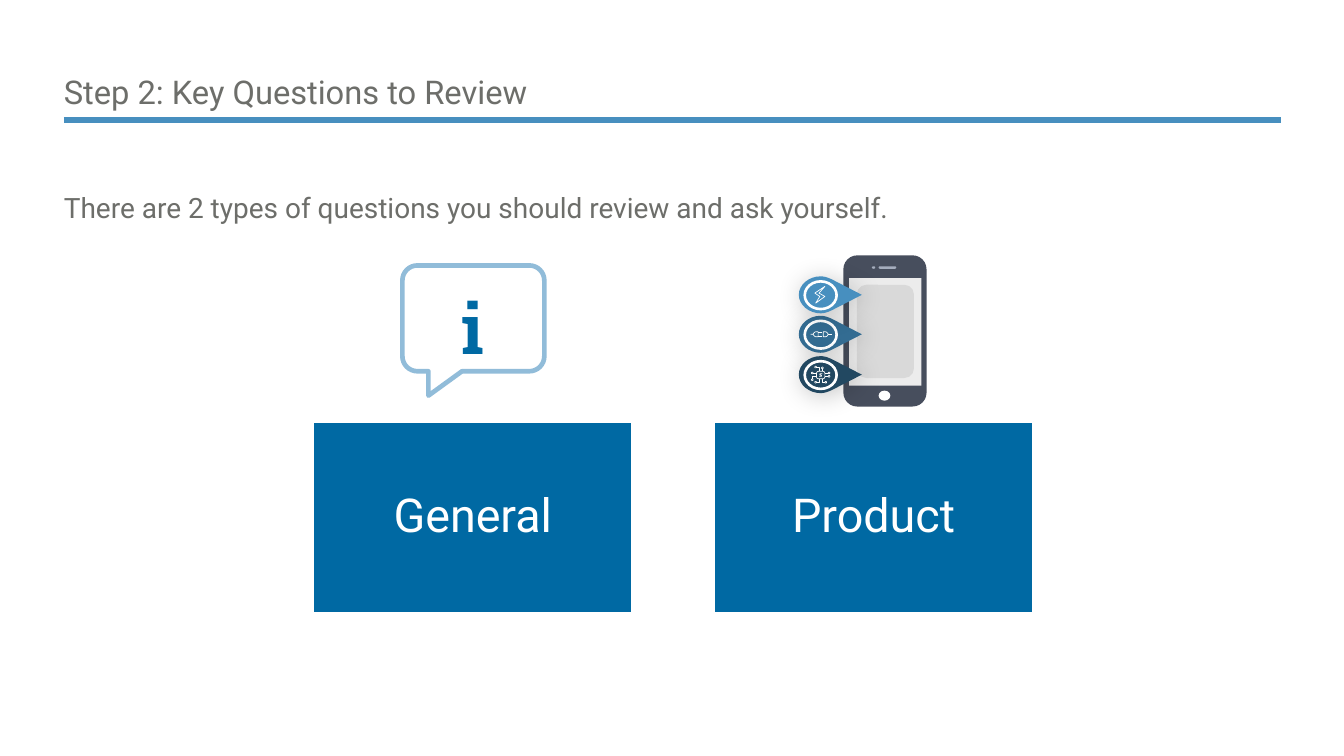
from lxml import etree
from pptx import Presentation
from pptx.dml.color import RGBColor
from pptx.enum.shapes import MSO_CONNECTOR, MSO_SHAPE
from pptx.enum.text import MSO_ANCHOR, PP_ALIGN
from pptx.oxml.ns import qn
from pptx.util import Pt

PX = 9144  # 100 px to the inch
RECT, ROUND, OVAL = MSO_SHAPE.RECTANGLE, MSO_SHAPE.ROUNDED_RECTANGLE, MSO_SHAPE.OVAL
STRAIGHT = MSO_CONNECTOR.STRAIGHT
LEFT, CENTER = PP_ALIGN.LEFT, PP_ALIGN.CENTER
TOP, MIDDLE, BOTTOM = MSO_ANCHOR.TOP, MSO_ANCHOR.MIDDLE, MSO_ANCHOR.BOTTOM

COLORS = {
    "white": "FFFFFF", "gray": "6D6E6A", "blue": "0069A3", "rule": "478FBF",
    "bubble": "91BCD9", "phone": "474E5D", "screen": "ECECEC", "panel": "D9D9D9",
    "speaker": "A5ADBD", "power": "478FBF", "plug": "336C92", "chip": "224861",
    "shadow": "000000",
}

# Outlines: a pair is a line end, six numbers are a curve
BUBBLE = [(497, 316), (630, 316), (640, 316, 648, 324, 648, 334), (648, 424),
          (648, 434, 640, 442, 630, 442), (550, 442), (510, 471), (510, 442),
          (497, 442), (487, 442, 479, 434, 479, 424), (479, 334),
          (479, 324, 487, 316, 497, 316)]
# Pins and their symbols are measured from the centre of the ring
PIN = [(0, -22), (5, -22, 10, -20, 14, -18), (49, 0), (14, 18),
       (10, 20, 5, 22, 0, 22), (-14, 22, -26, 12, -26, 0),
       (-26, -12, -14, -22, 0, -22)]
BOLT = [[(5, -10), (-7, -2), (-1, 2), (-6, 10), (5, 2), (-2, -2), (5, -10)]]
PLUG = [[(-12, 0), (-9, 0), (-8, -2, -7, -3, -5, -3), (-3, -3), (-3, 3), (-5, 3),
         (-7, 3, -8, 2, -9, 0)],
        [(-3, -2), (1, -2)], [(-3, 2), (1, 2)],
        [(3, -3), (5, -3), (7, -3, 8, -2, 9, 0), (8, 2, 7, 3, 5, 3), (3, 3), (3, -3)],
        [(9, 0), (13, 0)]]
CHIP = [[(-2, -4), (2, -4), (4, -4, 5, -3, 5, -1), (5, 2), (5, 4, 4, 5, 2, 5),
         (-2, 5), (-4, 5, -5, 4, -5, 2), (-5, -1), (-5, -3, -4, -4, -2, -4)],
        [(2, -1), (-1, -1), (-1, 0), (1, 1), (1, 2), (-2, 2)],
        [(-9, -2), (-5, -2)], [(-10, 5), (-10, 2), (-5, 2)],
        [(-5, -9), (-1, -9), (-1, -4)], [(2, -7), (2, -4)],
        [(5, -2), (9, -2)], [(5, 2), (9, 2)],
        [(2, 5), (2, 9), (5, 9)], [(-1, 5), (-1, 9), (-5, 9)]]
CHIP_NODES = [(-10, -2), (-10, 6), (-6, -9), (2, -8), (10, -2), (10, 2), (6, 9), (-6, 9)]


def rgb(name):
    return RGBColor.from_string(COLORS[name])


def paint(sp, fill=None, line=None, width=1):
    sp.shadow.inherit = False
    if fill:
        sp.fill.solid()
        sp.fill.fore_color.rgb = rgb(fill)
    else:
        sp.fill.background()
    if line:
        sp.line.color.rgb = rgb(line)
        sp.line.width = Pt(width)
    else:
        sp.line.fill.background()
    return sp


def add_box(s, kind, box, fill=None, line=None, width=1):
    sp = s.shapes.add_shape(kind, *(v * PX for v in box))
    return paint(sp, fill, line, width)


def trace(outline, dx, dy, steps=8):
    """Turn line ends and curves into a list of points."""
    points = []
    for part in outline:
        if len(part) == 2:
            points.append(part)
            continue
        (x0, y0), (x1, y1, x2, y2, x3, y3) = points[-1], part
        for i in range(1, steps + 1):
            t = i / steps
            u = 1 - t
            a, b, c, d = u ** 3, 3 * u * u * t, 3 * u * t * t, t ** 3
            points.append((a * x0 + b * x1 + c * x2 + d * x3,
                           a * y0 + b * y1 + c * y2 + d * y3))
    return [((x + dx) * PX, (y + dy) * PX) for x, y in points]


def add_outline(s, outlines, dx=0, dy=0, fill=None, line=None, width=1):
    builder = None
    for outline in outlines:
        points = trace(outline, dx, dy)
        if builder is None:
            builder = s.shapes.build_freeform(*points[0], scale=1.0)
        else:
            builder.move_to(*points[0])
        builder.add_line_segments(points[1:], close=outline[0] == outline[-1][-2:])
    return paint(builder.convert_to_shape(), fill, line, width)


def add_soft_shadow(sp):
    effects = sp._element.spPr.find(qn("a:effectLst"))
    shadow = etree.SubElement(effects, qn("a:outerShdw"), blurRad=str(Pt(22)),
                              dist=str(Pt(3)), dir="2700000", algn="ctr", rotWithShape="0")
    color = etree.SubElement(shadow, qn("a:srgbClr"), val=COLORS["shadow"])
    etree.SubElement(color, qn("a:alpha"), val="22000")


def write(sp, text, size, color, align=LEFT, anchor=TOP, inset=(0, 0),
          spacing=1.0, font="Roboto", bold=False):
    tf = sp.text_frame
    tf.word_wrap = True
    tf.vertical_anchor = anchor
    tf.margin_left = tf.margin_right = inset[0] * PX
    tf.margin_top = tf.margin_bottom = inset[1] * PX
    tf.text = text
    p = tf.paragraphs[0]
    p.alignment = align
    p.line_spacing = spacing
    p.space_before = Pt(0)
    r = p.runs[0]
    r.font.name, r.font.size, r.font.bold = font, Pt(size), bold
    r.font.color.rgb = rgb(color)


def add_text(s, box, text, size, color, **style):
    sp = s.shapes.add_textbox(*(v * PX for v in box))
    write(sp, text, size, color, **style)


def add_title(s, text):
    sp = s.shapes.title
    sp.left, sp.top, sp.width, sp.height = (v * PX for v in (76, 53, 1449, 79))
    write(sp, text, 28, "gray", anchor=BOTTOM)


def add_rule(s):
    c = s.shapes.add_connector(STRAIGHT, 76 * PX, 143 * PX, 1525 * PX, 143 * PX)
    c.line.color.rgb = rgb("rule")
    c.line.width = Pt(4.5)
    etree.SubElement(c._element.spPr, qn("a:effectLst"))


def add_card(s, x, text):
    sp = add_box(s, RECT, (x, 502, 380, 228), "blue", "white", 2)
    write(sp, text, 40, "white", align=CENTER, anchor=MIDDLE, inset=(17, 17), spacing=0.9)


def add_phone(s):
    add_box(s, ROUND, (1004, 304, 99, 180), "phone")
    add_box(s, RECT, (1011, 331, 86, 128), "screen")
    add_box(s, ROUND, (1020, 339, 68, 111), "panel")
    speaker = add_box(s, ROUND, (1046, 317, 21, 3), "speaker")
    speaker.adjustments[0] = 0.5
    add_box(s, OVAL, (1038, 317, 4, 3), "speaker")
    add_box(s, OVAL, (1046, 465, 14, 12), "white")


def add_pin(s, y, fill, symbol, nodes=()):
    x = 977
    add_soft_shadow(add_outline(s, [PIN], x, y, fill))
    add_box(s, OVAL, (x - 19, y - 16, 38, 33), None, "white", 2.25)
    add_outline(s, symbol, x, y, None, "white", 0.6)
    for dx, dy in nodes:
        add_box(s, OVAL, (x + dx - 1, y + dy - 1, 2, 2), None, "white", 0.6)


def main():
    prs = Presentation()
    prs.slide_width, prs.slide_height = 1600 * PX, 900 * PX
    s = prs.slides.add_slide(prs.slide_layouts[5])

    # Heading
    add_rule(s)
    add_title(s, "Step 2: Key Questions to Review")
    add_text(s, (76, 223, 1449, 42),
             "There are 2 types of questions you should review and ask yourself.",
             24, "gray", spacing=1.1)

    # Question types
    for x, text in ((373, "General"), (850, "Product")):
        add_card(s, x, text)

    # Information bubble
    add_outline(s, [BUBBLE], fill="white", line="bubble", width=4)
    add_text(s, (469, 324, 188, 114), "i", 60, "blue", align=CENTER, inset=(10, 5),
             spacing=1.1, font="Roboto Slab", bold=True)

    # Phone with feature pins
    add_phone(s)
    add_pin(s, 398, "plug", PLUG)
    add_pin(s, 351, "power", BOLT)
    add_pin(s, 446, "chip", CHIP, CHIP_NODES)

    prs.save("out.pptx")


if __name__ == "__main__":
    main()
